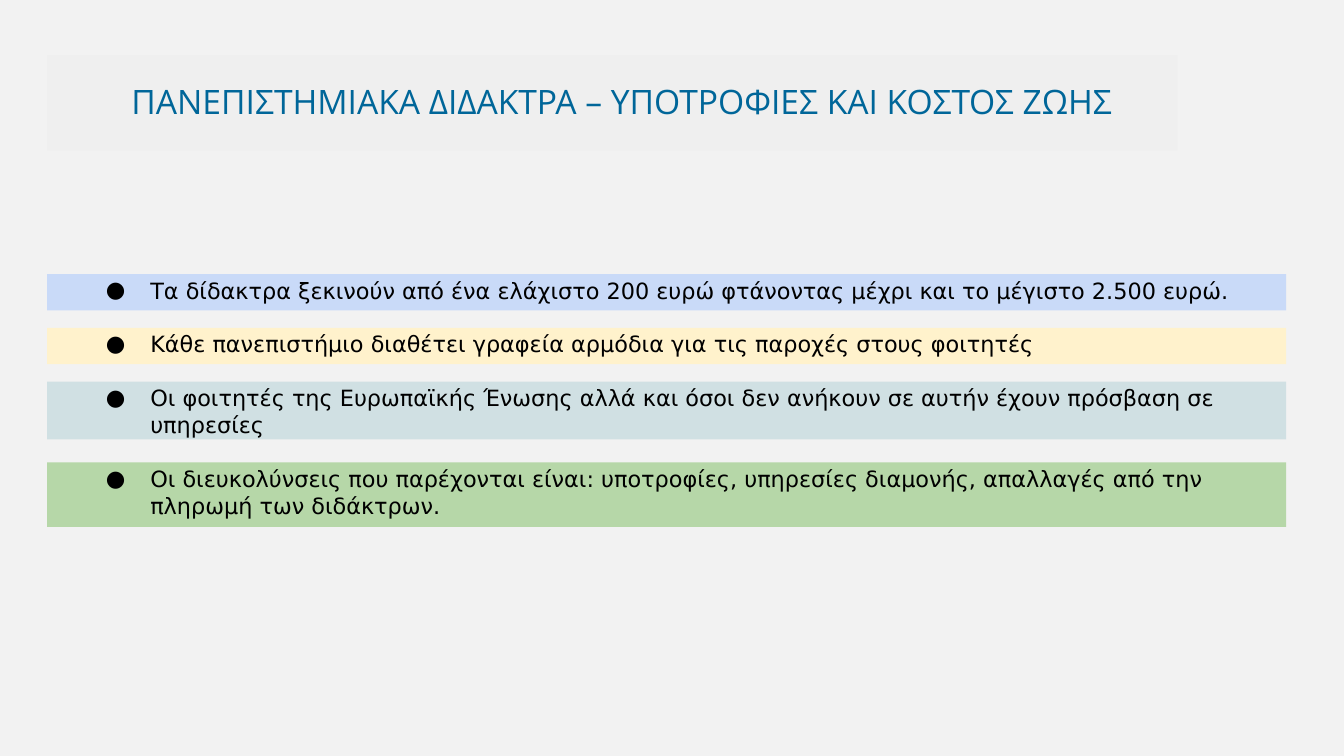
from lxml import etree
from pptx import Presentation
from pptx.dml.color import RGBColor
from pptx.enum import shapes, text
from pptx.oxml import ns
from pptx.util import Inches, Pt

# Content
HEADING = "ΠΑΝΕΠΙΣΤΗΜΙΑΚΑ ΔΙΔΑΚΤΡΑ – ΥΠΟΤΡΟΦΙΕΣ ΚΑΙ ΚΟΣΤΟΣ ΖΩΗΣ"
# Each point: wording, band top, band height, band colour
POINTS = [
    ("Tα δίδακτρα ξεκινούν από ένα ελάχιστο 200 ευρώ φτάνοντας μέχρι και "
     "το μέγιστο 2.500 ευρώ.", 2.04, 0.27, "C9DAF8"),
    ("Κάθε πανεπιστήμιο διαθέτει γραφεία αρμόδια για τις παροχές στους "
     "φοιτητές", 2.44, 0.27, "FFF2CC"),
    ("Οι φοιτητές της Ευρωπαϊκής Ένωσης αλλά και όσοι δεν ανήκουν σε αυτήν "
     "έχουν πρόσβαση σε υπηρεσίες", 2.84, 0.43, "D0E0E3"),
    ("Οι διευκολύνσεις που παρέχονται είναι: υποτροφίες, υπηρεσίες διαμονής, "
     "απαλλαγές από την πληρωμή των διδάκτρων.", 3.44, 0.48, "B6D7A8"),
]

THEME = {
    "background": "F2F2F2",
    "heading_band": "EFEFEF",
    "heading": ("Open Sans", 18, "006699"),
    "body": ("DejaVu Sans", 12, "000000"),
    "line_pitch": 14.4,
}
SLIDE_WIDTH = Inches(10)
BAND_LEFT, BAND_WIDTH = 0.35, 9.22


def add_band(slide, top, width, height, colour):
    band = slide.shapes.add_shape(
        shapes.MSO_SHAPE.RECTANGLE,
        Inches(BAND_LEFT), Inches(top), Inches(width), Inches(height))
    band.shadow.inherit = False
    band.fill.solid()
    band.fill.fore_color.rgb = RGBColor.from_string(colour)
    band.line.fill.background()


def add_text(slide, box, lines, style):
    frame = slide.shapes.add_textbox(*map(Inches, box)).text_frame
    frame.word_wrap = True
    frame.vertical_anchor = text.MSO_ANCHOR.TOP
    frame.margin_left = frame.margin_right = Inches(0.1)
    frame.margin_top = frame.margin_bottom = Inches(0.1)
    frame.text = "\n".join(lines)
    font_name, size, colour = style
    for paragraph in frame.paragraphs:
        for run in paragraph.runs:
            run.font.name = font_name
            run.font.size = Pt(size)
            run.font.color.rgb = RGBColor.from_string(colour)
    return frame.paragraphs


def add_bullet(paragraph, font_name, size):
    properties = paragraph._p.get_or_add_pPr()
    properties.set("marL", str(Inches(0.5)))
    properties.set("indent", str(Inches(-0.33)))
    for tag, key, value in (("a:buSzPts", "val", str(size * 100)),
                            ("a:buFont", "typeface", font_name),
                            ("a:buChar", "char", "●")):
        etree.SubElement(properties, ns.qn(tag)).set(key, value)


def main():
    deck = Presentation()
    deck.slide_width, deck.slide_height = SLIDE_WIDTH, SLIDE_WIDTH * 9 // 16
    slide = deck.slides.add_slide(deck.slide_layouts[6])
    slide.background.fill.solid()
    slide.background.fill.fore_color.rgb = RGBColor.from_string(THEME["background"])

    # Coloured bands, lowest first
    for _, top, height, colour in reversed(POINTS):
        add_band(slide, top, BAND_WIDTH, height, colour)
    add_band(slide, 0.41, 8.41, 0.71, THEME["heading_band"])

    # Heading
    add_text(slide, (0.88, 0.5, 7.88, 0.63), [HEADING], THEME["heading"])

    # Bulleted points, one line apart
    points = add_text(slide, (0.52, 1.96, 9.14, 2.73),
                      [point[0] for point in POINTS], THEME["body"])
    font_name, size, _ = THEME["body"]
    for point in points:
        point.line_spacing = point.space_after = Pt(THEME["line_pitch"])
        add_bullet(point, font_name, size)

    deck.save("out.pptx")


if __name__ == "__main__":
    main()
